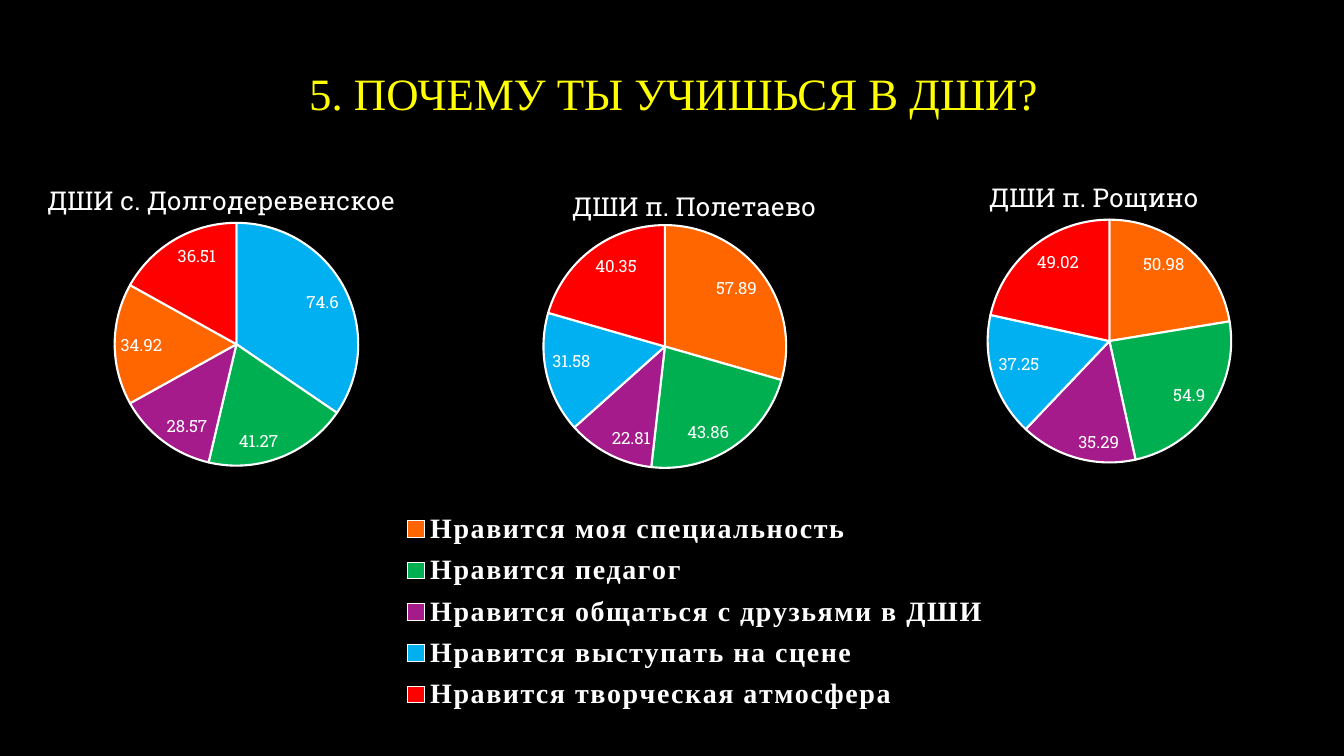
from lxml import etree
from pptx import Presentation
from pptx.chart.data import CategoryChartData
from pptx.dml.color import RGBColor
from pptx.enum.chart import XL_CHART_TYPE, XL_LABEL_POSITION, XL_LEGEND_POSITION
from pptx.enum.text import MSO_ANCHOR, PP_ALIGN
from pptx.oxml.ns import qn
from pptx.util import Cm, Pt

BLACK = RGBColor(0x00, 0x00, 0x00)
WHITE = RGBColor(0xFF, 0xFF, 0xFF)
YELLOW = RGBColor(0xFF, 0xFF, 0x00)
ORANGE = RGBColor(0xFF, 0x66, 0x00)
GREEN = RGBColor(0x00, 0xB0, 0x50)
PURPLE = RGBColor(0xA5, 0x1B, 0x8B)
BLUE = RGBColor(0x00, 0xB0, 0xF0)
RED = RGBColor(0xFF, 0x00, 0x00)

SLAB = "Roboto Slab"
TIMES = "Times New Roman"
REASONS = [
    "Нравится моя специальность",
    "Нравится педагог",
    "Нравится общаться с друзьями в ДШИ",
    "Нравится выступать на сцене",
    "Нравится творческая атмосфера",
]
NUMBERS = ["1", "2", "3", "4", "5"]
REASON_COLORS = [ORANGE, GREEN, PURPLE, BLUE, RED]
SMALL_PLOT = (0.084, 0.215, 0.916, 0.785)
SCHOOLS = [
    dict(box=(-0.36, 3.94, 11.66, 7.82), title="ДШИ с. Долгодеревенское",
         title_at=(0.123, 0.063), plot=SMALL_PLOT, categories=NUMBERS,
         values=[74.6, 41.27, 28.57, 34.92, 36.51],
         colors=[BLUE, GREEN, PURPLE, ORANGE, RED]),
    dict(box=(8.99, 3.94, 16.81, 14.35), title="ДШИ п. Полетаево",
         title_at=(0.316, 0.044), plot=(0.28, 0.109, 0.364, 0.45),
         categories=REASONS, values=[57.89, 43.86, 22.81, 31.58, 40.35],
         colors=REASON_COLORS, legend=(0.057, 0.61, 0.9, 0.38)),
    dict(box=(21.64, 3.86, 11.66, 7.82), title="ДШИ п. Рощино",
         title_at=(0.272, 0.063), plot=SMALL_PLOT, categories=NUMBERS,
         values=[50.98, 54.9, 35.29, 37.25, 49.02], colors=REASON_COLORS),
]


def style_font(font, size=12, color=WHITE, name=SLAB, bold=False):
    font.size = Pt(size)
    font.color.rgb = color
    font.name = name
    font.bold = bold


def add_text(tf, text, align=PP_ALIGN.CENTER, **font):
    p = tf.paragraphs[0]
    p.alignment = align
    r = p.add_run()
    r.text = text
    style_font(r.font, **font)
    return p


def set_layout(parent, after, position, inner=False):
    for old in parent.findall(qn("c:layout")):
        parent.remove(old)
    layout = etree.Element(qn("c:layout"))
    manual = etree.SubElement(layout, qn("c:manualLayout"))
    settings = [("layoutTarget", "inner")] if inner else []
    settings += [("xMode", "edge"), ("yMode", "edge")]
    settings += list(zip("xywh", position))
    for tag, value in settings:
        etree.SubElement(manual, qn(f"c:{tag}")).set("val", str(value))
    previous = parent.find(qn(after)) if after else None
    if previous is None:
        parent.insert(0, layout)
    else:
        previous.addnext(layout)


def add_legend(chart, position):
    chart.has_legend = True
    legend = chart.legend
    legend.position = XL_LEGEND_POSITION.BOTTOM
    legend.include_in_layout = False
    style_font(legend.font, size=20, name=TIMES, bold=True)
    for props in legend._element.iter(qn("a:defRPr")):
        props.set("spc", "100")
    set_layout(legend._element, "c:legendPos", position)


def add_pie(slide, box, title, title_at, plot, categories, values, colors, legend=None):
    data = CategoryChartData()
    data.categories = categories
    data.add_series("Series 1", values)
    chart = slide.shapes.add_chart(XL_CHART_TYPE.PIE, *map(Cm, box), data).chart
    style_font(chart.font, size=10)

    chart.has_title = True
    add_text(chart.chart_title.text_frame, title, size=18.6)
    set_layout(chart.chart_title._element, "c:tx", title_at)
    set_layout(chart.plots[0]._element.getparent(), None, plot, inner=True)

    pie = chart.plots[0]
    pie.vary_by_categories = True
    for i, color in enumerate(colors):
        point = pie.series[0].points[i].format
        point.fill.solid()
        point.fill.fore_color.rgb = color
        point.line.color.rgb = WHITE
        point.line.width = Pt(1.5)

    pie.has_data_labels = True
    labels = pie.data_labels
    labels.show_value = True
    labels.show_percentage = False
    labels.position = XL_LABEL_POSITION.INSIDE_END
    style_font(labels.font)

    chart.has_legend = False
    if legend:
        add_legend(chart, legend)


def add_heading(slide, box, text):
    tf = slide.shapes.add_textbox(*map(Cm, box)).text_frame
    tf.word_wrap = True
    tf.vertical_anchor = MSO_ANCHOR.MIDDLE
    p = add_text(tf, text, size=32, color=YELLOW, name=TIMES)
    p.line_spacing = 0.9


def main():
    prs = Presentation()
    prs.slide_width, prs.slide_height = Cm(33.87), Cm(19.05)
    slide = prs.slides.add_slide(prs.slide_layouts[6])
    fill = slide.background.fill
    fill.solid()
    fill.fore_color.rgb = BLACK

    add_heading(slide, (1.04, 1.22, 31.88, 2.39), "5. ПОЧЕМУ ТЫ УЧИШЬСЯ В ДШИ?")
    for school in SCHOOLS:
        add_pie(slide, **school)
    prs.save("out.pptx")


if __name__ == "__main__":
    main()
